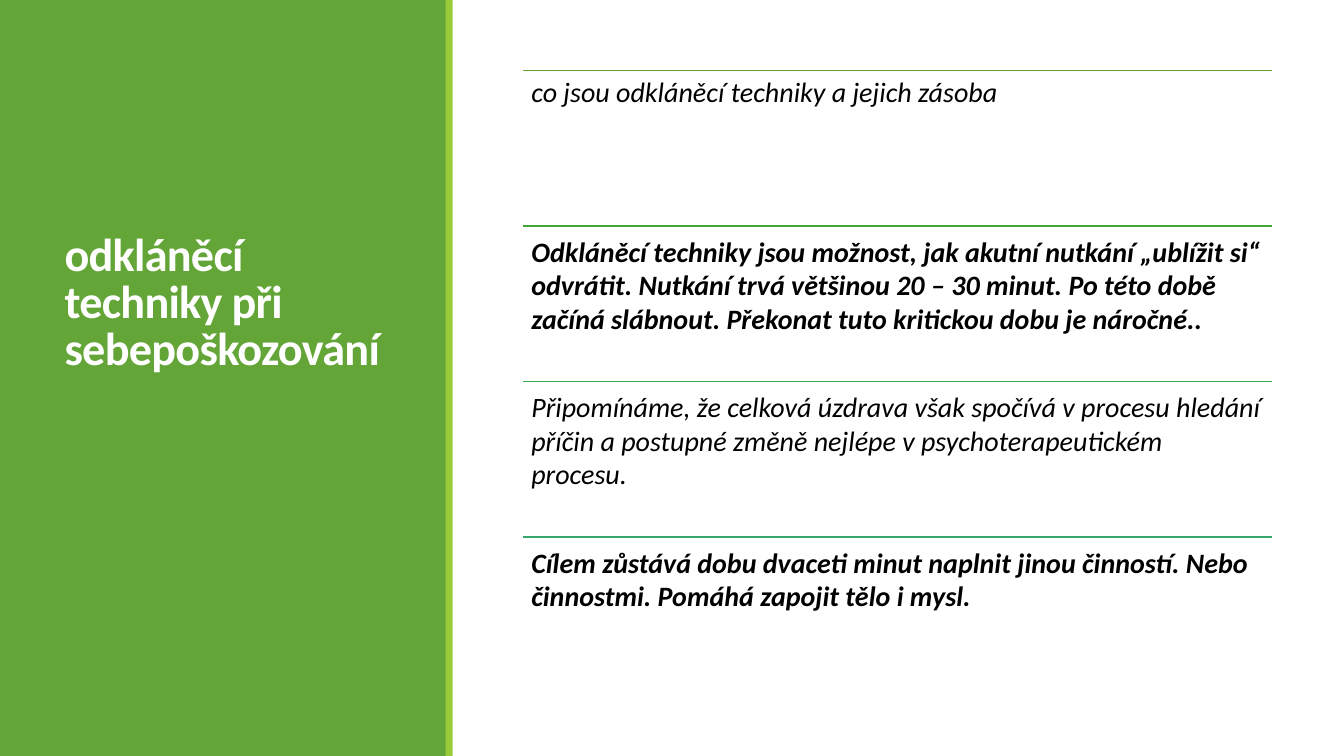
from lxml import etree
from pptx import Presentation
from pptx.dml.color import RGBColor
from pptx.enum.shapes import MSO_CONNECTOR, MSO_SHAPE
from pptx.enum.text import MSO_ANCHOR, PP_ALIGN
from pptx.oxml.ns import qn
from pptx.util import Inches, Pt

GREEN = RGBColor(0x63, 0xA5, 0x37)
LIME = RGBColor(0x99, 0xCB, 0x38)
WHITE = RGBColor(0xFF, 0xFF, 0xFF)
BLACK = RGBColor(0x00, 0x00, 0x00)
FONT = "Calibri"

ROW_LEFT, ROW_TOP, ROW_WIDTH, ROW_HEIGHT = 5.19, 0.7, 7.43, 1.543

# Rule colour, bold, line spacing, text
ROWS = [
    (GREEN, False, 0.9, "co jsou odkláněcí techniky a jejich zásoba"),
    (RGBColor(0x42, 0xA6, 0x37), True, 1.0,
     "Odkláněcí techniky jsou možnost, jak akutní nutkání „ublížit si“ odvrátit. "
     "Nutkání trvá většinou 20 – 30 minut. Po této době začíná slábnout. "
     "Překonat tuto kritickou dobu je náročné.."),
    (RGBColor(0x37, 0xA6, 0x4D), False, 1.0,
     "Připomínáme, že celková úzdrava však spočívá v procesu hledání příčin "
     "a postupné změně nejlépe v psychoterapeutickém procesu."),
    (RGBColor(0x37, 0xA7, 0x6F), True, 1.0,
     "Cílem zůstává dobu dvaceti minut naplnit jinou činností. "
     "Nebo činnostmi. Pomáhá zapojit tělo i mysl."),
]

deck = Presentation()
deck.slide_width, deck.slide_height = Inches(13.33), Inches(7.5)
slide = deck.slides.add_slide(deck.slide_layouts[5])
shapes = slide.shapes
title = shapes.title

# Side panel with its narrow edge, placed behind the title
for left, width, color in [(0, 4.43, GREEN), (4.42, 0.07, LIME)]:
    panel = shapes.add_shape(MSO_SHAPE.RECTANGLE, Inches(left), 0,
                             Inches(width), deck.slide_height)
    panel.shadow.inherit = False
    panel.fill.solid()
    panel.fill.fore_color.rgb = color
    panel.line.fill.background()
    title.element.addprevious(panel.element)

title.left, title.top = Inches(0.54), Inches(0.57)
title.width, title.height = Inches(3.37), Inches(6.31)
frame = title.text_frame
frame.word_wrap = True
frame.vertical_anchor = MSO_ANCHOR.MIDDLE
frame.margin_bottom = Inches(1.46)
para = frame.paragraphs[0]
para.alignment = PP_ALIGN.LEFT
para.line_spacing = 0.85
para.font.name, para.font.size, para.font.bold = FONT, Pt(33), True
para.font.color.rgb = WHITE
span = para.add_run()
span.text = "odkláněcí techniky při sebepoškozování"
span._r.get_or_add_rPr().set("spc", "-50")

for index, (color, bold, spacing, text) in enumerate(ROWS):
    left, top = Inches(ROW_LEFT), Inches(ROW_TOP + index * ROW_HEIGHT)
    width = Inches(ROW_WIDTH)

    rule = shapes.add_connector(MSO_CONNECTOR.STRAIGHT, left, top, left + width, top)
    rule.line.color.rgb = color
    rule.line.width = Pt(1.25)
    etree.SubElement(rule.element.spPr, qn("a:effectLst"))

    box = shapes.add_textbox(left, top, width, Inches(ROW_HEIGHT))
    frame = box.text_frame
    frame.word_wrap = True
    frame.margin_left = frame.margin_right = Inches(0.08)
    frame.margin_top = frame.margin_bottom = Inches(0.08)
    para = frame.paragraphs[0]
    para.text = text
    para.line_spacing = spacing
    para.font.name, para.font.size = FONT, Pt(20)
    para.font.bold, para.font.italic = bold, True
    para.font.color.rgb = BLACK

deck.save("out.pptx")
